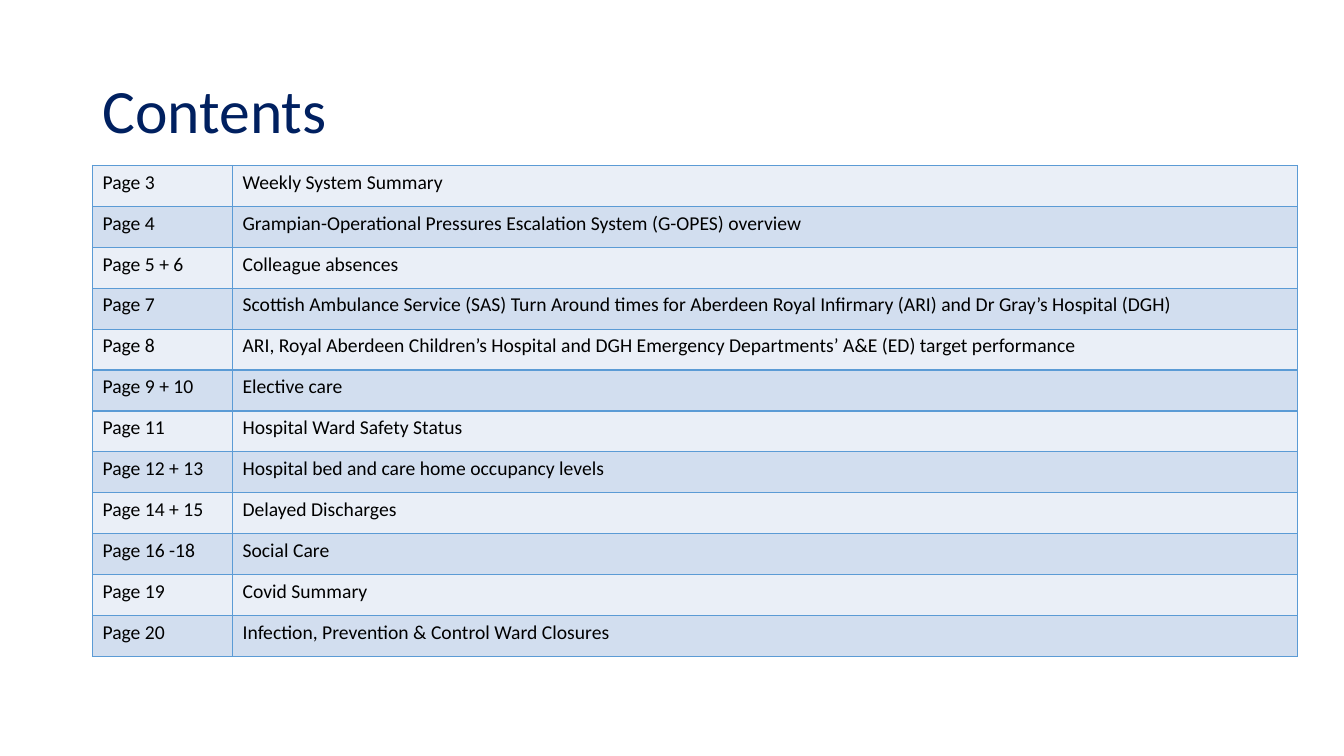
from pptx import Presentation
from pptx.dml.color import RGBColor
from pptx.enum import text
from pptx.oxml import parse_xml
from pptx.oxml.ns import nsdecls
from pptx.util import Cm, Pt

TABLE_HEIGHT = 12.38
COLUMN_WIDTHS = (3.53, 26.83)
BANDS = ("EAEFF7", "D2DEEF")
BORDER = "5B9BD5"

CONTENTS = [
    ("Page 3", "Weekly System Summary"),
    ("Page 4", "Grampian-Operational Pressures Escalation System (G-OPES) overview"),
    ("Page 5 + 6", "Colleague absences"),
    ("Page 7", "Scottish Ambulance Service (SAS) Turn Around times for "
               "Aberdeen Royal Infirmary (ARI) and Dr Gray’s Hospital (DGH)"),
    ("Page 8", "ARI, Royal Aberdeen Children’s Hospital and DGH "
               "Emergency Departments’ A&E (ED) target performance"),
    ("Page 9 + 10", "Elective care"),
    ("Page 11", "Hospital Ward Safety Status"),
    ("Page 12 + 13", "Hospital bed and care home occupancy levels"),
    ("Page 14 + 15", "Delayed Discharges"),
    ("Page 16 -18", "Social Care"),
    ("Page 19", "Covid Summary"),
    ("Page 20", "Infection, Prevention & Control Ward Closures"),
]


def rgb(value):
    return RGBColor.from_string(value)


def add_run(p, words, size, color):
    r = p.add_run()
    r.text = words
    r.font.name = "Calibri"
    r.font.size = Pt(size)
    r.font.color.rgb = rgb(color)


prs = Presentation()
prs.slide_width, prs.slide_height = Cm(33.87), Cm(19.05)
s = prs.slides.add_slide(prs.slide_layouts[6])

# Title
sp = s.shapes.add_textbox(Cm(2.33), Cm(1.01), Cm(29.21), Cm(3.68))
tf = sp.text_frame
tf.word_wrap = True
tf.vertical_anchor = text.MSO_ANCHOR.MIDDLE
p = tf.paragraphs[0]
p.line_spacing = 0.9
add_run(p, "Contents", 44, "002060")

# Contents table
table = s.shapes.add_table(len(CONTENTS), len(COLUMN_WIDTHS), Cm(2.33), Cm(4.17),
                           Cm(sum(COLUMN_WIDTHS)), Cm(TABLE_HEIGHT)).table
table.first_row = False
for column, width in zip(table.columns, COLUMN_WIDTHS):
    column.width = Cm(width)

for i, entry in enumerate(CONTENTS):
    for j, words in enumerate(entry):
        cell = table.cell(i, j)
        add_run(cell.text_frame.paragraphs[0], words, 14, "000000")
        # Borders come before the fill in the cell properties
        tc_pr = cell._tc.get_or_add_tcPr()
        for side in ("lnL", "lnR", "lnT", "lnB"):
            tc_pr.append(parse_xml(
                f'<a:{side} {nsdecls("a")} w="{Pt(1)}"><a:solidFill>'
                f'<a:srgbClr val="{BORDER}"/></a:solidFill></a:{side}>'))
        cell.fill.solid()
        cell.fill.fore_color.rgb = rgb(BANDS[i % 2])

prs.save("out.pptx")
